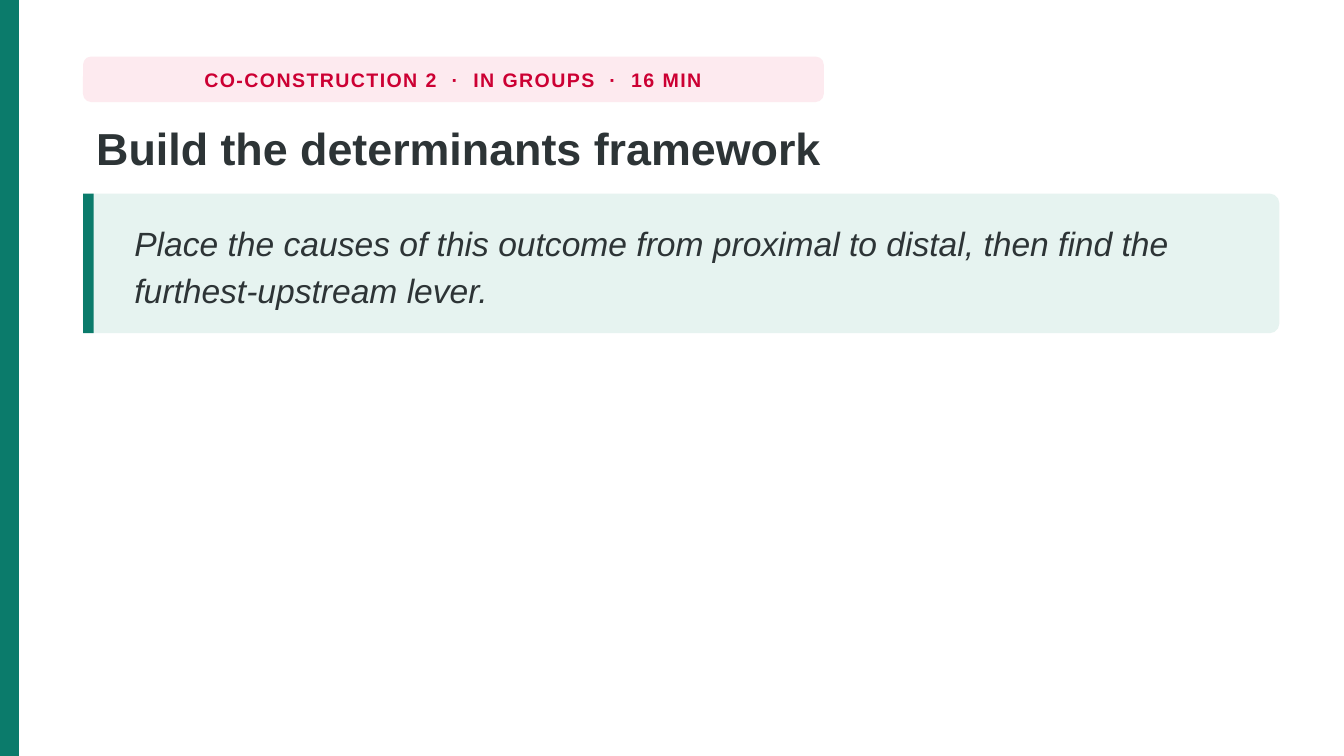
from pptx import Presentation
from pptx.dml.color import RGBColor
from pptx.enum.shapes import MSO_SHAPE
from pptx.enum.text import MSO_ANCHOR, PP_ALIGN
from pptx.util import Cm, Pt

RECTANGLE = MSO_SHAPE.RECTANGLE
ROUNDED = MSO_SHAPE.ROUNDED_RECTANGLE
TOP = MSO_ANCHOR.TOP
MIDDLE = MSO_ANCHOR.MIDDLE
LEFT = PP_ALIGN.LEFT
CENTER = PP_ALIGN.CENTER

GREEN = RGBColor(0x0B, 0x7B, 0x6B)
PALE_GREEN = RGBColor(0xE6, 0xF3, 0xF0)
RED = RGBColor(0xCC, 0x00, 0x33)
PALE_RED = RGBColor(0xFD, 0xEA, 0xEF)
DARK = RGBColor(0x2D, 0x34, 0x36)

PAGE_HEIGHT = Cm(14.29)
MARGIN = Cm(1.57)
CONTENT_WIDTH = Cm(22.61)
TAG_AREA = (MARGIN, Cm(1.07), Cm(14), Cm(0.86))
TITLE_AREA = (MARGIN, Cm(2.13), CONTENT_WIDTH, Cm(1.42))
CARD_TOP = Cm(3.66)
CARD_HEIGHT = Cm(2.64)
CARD_PADDING = Cm(0.13)


def add_panel(page, kind, area, color, corner=None):
    panel = page.shapes.add_shape(kind, *area)
    panel.shadow.inherit = False
    panel.fill.solid()
    panel.fill.fore_color.rgb = color
    panel.line.fill.background()
    if corner is not None:
        panel.adjustments[0] = corner


def add_text(page, area, text, size, color, anchor, align, spacing, wrap=True):
    frame = page.shapes.add_textbox(*area).text_frame
    frame.word_wrap = wrap
    frame.vertical_anchor = anchor
    para = frame.paragraphs[0]
    para.alignment = align
    para.line_spacing = spacing
    span = para.add_run()
    span.text = text
    span.font.name = "Arial"
    span.font.size = Pt(size)
    span.font.color.rgb = color
    return span


deck = Presentation()
deck.slide_width = Cm(25.4)
deck.slide_height = PAGE_HEIGHT
page = deck.slides.add_slide(deck.slide_layouts[6])

add_panel(page, RECTANGLE, (0, 0, Cm(0.36), PAGE_HEIGHT), GREEN)

add_panel(page, ROUNDED, TAG_AREA, PALE_RED, 0.18)
tag = add_text(page, TAG_AREA, "CO-CONSTRUCTION 2  ·  IN GROUPS  ·  16 MIN",
               10.5, RED, MIDDLE, CENTER, 1.0, wrap=False)
tag.font.bold = True
tag._r.get_or_add_rPr().set("spc", "80")

title = add_text(page, TITLE_AREA, "Build the determinants framework",
                 24, DARK, TOP, LEFT, 1.02)
title.font.bold = True

add_panel(page, ROUNDED, (MARGIN, CARD_TOP, CONTENT_WIDTH, CARD_HEIGHT), PALE_GREEN, 0.07)
add_panel(page, RECTANGLE, (MARGIN, CARD_TOP, Cm(0.2), CARD_HEIGHT), GREEN)
prompt_area = (Cm(2.29), CARD_TOP + CARD_PADDING, Cm(21.21), CARD_HEIGHT - 2 * CARD_PADDING)
prompt = add_text(page, prompt_area,
                  "Place the causes of this outcome from proximal to distal, "
                  "then find the furthest-upstream lever.",
                  18, DARK, MIDDLE, LEFT, 1.16)
prompt.font.italic = True

deck.save("out.pptx")
